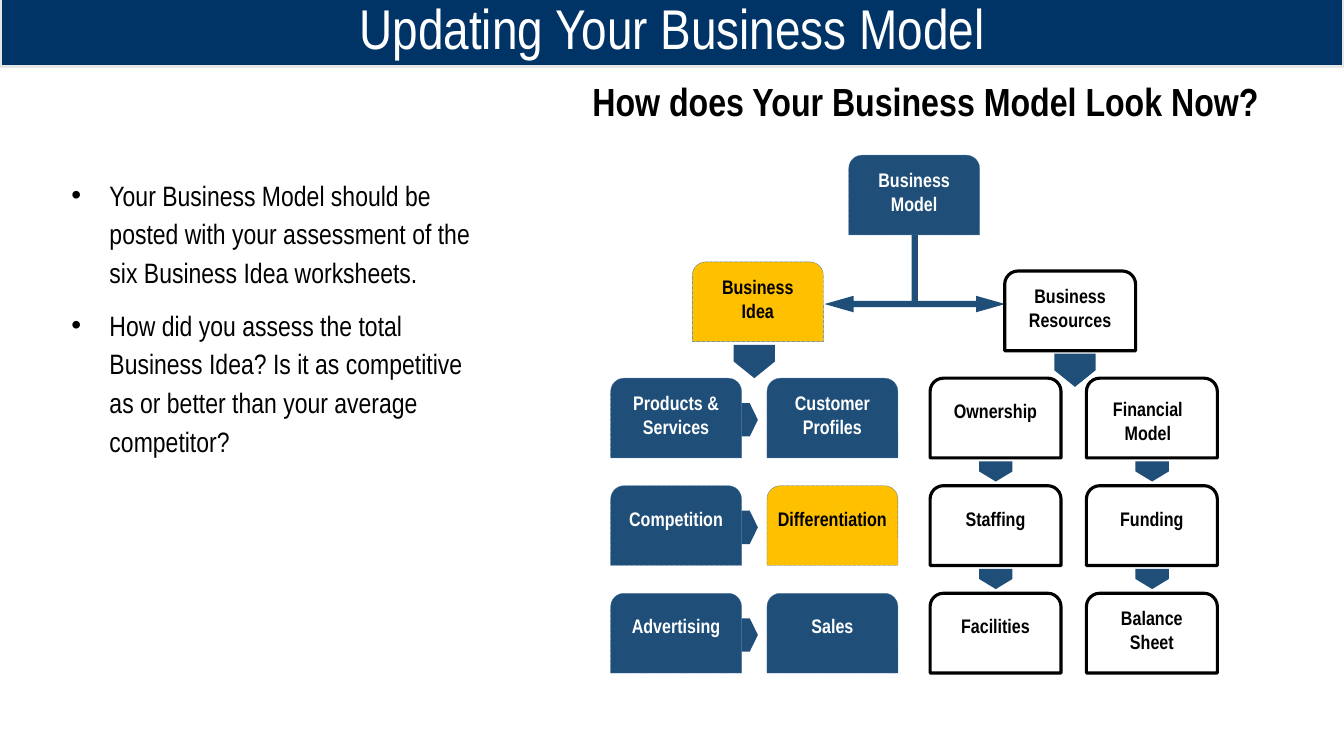
"""Build the slide on updating a business model, with its chart of cards."""
from lxml import etree
from pptx import Presentation
from pptx.dml.color import RGBColor
from pptx.enum.dml import MSO_LINE
from pptx.enum.shapes import MSO_SHAPE
from pptx.enum.text import MSO_ANCHOR, MSO_AUTO_SIZE, PP_ALIGN
from pptx.oxml.ns import qn
from pptx.util import Cm, Pt

RECT = MSO_SHAPE.RECTANGLE
CARD = MSO_SHAPE.ROUND_2_SAME_RECTANGLE
CHIP = MSO_SHAPE.PENTAGON
FORK = MSO_SHAPE.LEFT_RIGHT_UP_ARROW
DOTS = MSO_LINE.ROUND_DOT
TOP, BOTTOM = MSO_ANCHOR.TOP, MSO_ANCHOR.BOTTOM
GROW = MSO_AUTO_SIZE.SHAPE_TO_FIT_TEXT
LEFT, CENTER = PP_ALIGN.LEFT, PP_ALIGN.CENTER
BLUE, GOLD, BLACK, WHITE = "1F4E79", "FFC000", "000000", "FFFFFF"
hue = RGBColor.from_string


def draw(kind, box, fill=BLUE, line=None, width=0):
    shape = slide.shapes.add_shape(kind, *[Cm(v) for v in box])
    shape.shadow.inherit = False
    if fill:
        shape.fill.solid()
        shape.fill.fore_color.rgb = hue(fill)
    else:
        shape.fill.background()
    if line:
        shape.line.color.rgb = hue(line)
        shape.line.width = Pt(width)
    else:
        shape.line.fill.background()
    return shape


def write(frame, lines, size, color, bold=False, align=CENTER):
    for i, line in enumerate(lines):
        para = frame.add_paragraph() if i else frame.paragraphs[0]
        para.alignment = align
        run = para.add_run()
        run.text = line
        run.font.name = "Arial Narrow"
        run.font.size = Pt(size)
        run.font.bold = bold
        run.font.color.rgb = hue(color)


deck = Presentation()
deck.slide_width, deck.slide_height = Cm(33.87), Cm(19.05)
slide = deck.slides.add_slide(deck.slide_layouts[6])

body = slide.shapes.add_textbox(Cm(1.45), Cm(4.24), Cm(10.92), Cm(10.59)).text_frame
body.word_wrap = True
write(body, [
    "Your Business Model should be posted with your assessment of the six Business Idea worksheets.",
    "How did you assess the total Business Idea? Is it as competitive as or better than your average competitor?",
], 20, BLACK, align=LEFT)
for para in body.paragraphs:
    para.line_spacing = 1.15
    para.space_after = Pt(10)
    props = para._p.get_or_add_pPr()
    props.set("marL", str(Cm(1.06)))
    props.set("indent", str(-Cm(0.96)))
    etree.SubElement(props, qn("a:buFont")).set("typeface", "Arial")
    etree.SubElement(props, qn("a:buChar")).set("char", "•")

head = slide.shapes.add_textbox(Cm(14.68), Cm(1.83), Cm(17.48), Cm(1.45)).text_frame
head.word_wrap = False
head.auto_size = GROW
write(head, ["How does Your Business Model Look Now?"], 28, BLACK, True, LEFT)

title = draw(RECT, (0, -0.2, 33.87, 1.88), "003366", "E7E6E6", 2.25).text_frame
title.vertical_anchor = BOTTOM
write(title, ["Updating Your Business Model"], 40, WHITE)
title.paragraphs[0].line_spacing = 0.9

fork = draw(FORK, (20.78, 4.95, 4.55, 2.92))
for i, value in enumerate((0.054, 0.071, 0.25)):
    fork.adjustments[i] = value

cols = (15.39, 19.33, 23.44, 27.38)
top, step = 9.53, 2.71
grid = [
    [("Products &", "Services"), ("Customer", "Profiles"), ("Ownership",), ("Financial", "Model")],
    [("Competition",), ("Differentiation",), ("Staffing",), ("Funding",)],
    [("Advertising",), ("Sales",), ("Facilities",), ("Balance", "Sheet")],
]
cards = [
    (21.39, 3.91, ("Business", "Model"), BLUE),
    (17.45, 6.6, ("Business", "Idea"), GOLD),
    (25.32, 6.83, ("Business", "Resources"), None),
]
for r, row in enumerate(grid):
    for c, lines in enumerate(row):
        fill = None if c > 1 else GOLD if (r, c) == (1, 1) else BLUE
        cards.append((cols[c], top + r * step, lines, fill))

for x, y, lines, fill in cards:
    edge, width = ("43739E", 0.25) if fill else (BLACK, 2.25)
    card = draw(CARD, (x, y, 3.3, 2.01), fill, edge, width)
    if fill:
        card.line.dash_style = DOTS
    frame = card.text_frame
    frame.word_wrap = True
    frame.vertical_anchor = TOP
    frame.margin_left = frame.margin_right = frame.margin_bottom = 0
    frame.margin_top = Cm(0.43 if len(lines) == 1 else 0.23)
    if lines[0] == "Financial":
        frame.margin_top, frame.margin_right = Cm(0.38), Cm(0.2)
    write(frame, lines, 14, WHITE if fill == BLUE else BLACK, True)

chips = [(18.59, 8.59, 0.84, 1.04, 90), (26.67, 8.81, 0.84, 1.04, 90)]
chips += [(18.69, 10.16 + r * step, 0.41, 0.84, 0) for r in range(3)]
chips += [(x, 11.46 + r * step, 0.51, 0.84, 90) for x in (24.84, 28.78) for r in range(2)]
for *box, turn in chips:
    draw(CHIP, box).rotation = turn

deck.save("out.pptx")
